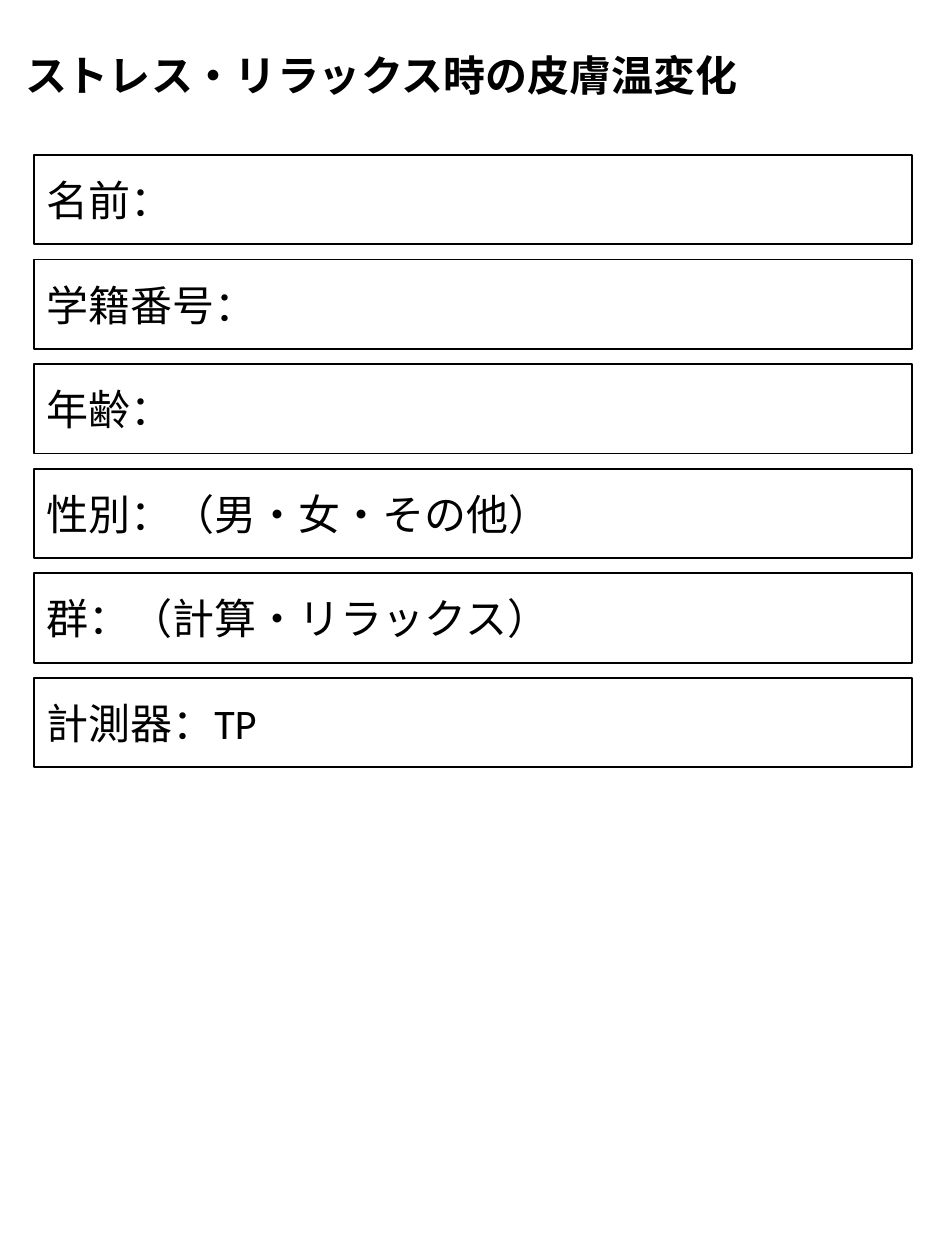
from typing import NamedTuple

from pptx import Presentation
from pptx.dml.color import RGBColor
from pptx.enum import shapes, text
from pptx.util import Inches, Pt

BLACK, WHITE = "000000", "FFFFFF"
FONT = "Calibri"
FIELD_LEFT, FIELD_TOP = 0.27, 1.23
FIELD_WIDTH, FIELD_HEIGHT = 6.97, 0.71
FIELD_PITCH = 0.83


class Field(NamedTuple):
    label: str
    answer: str = ""


FIELDS = [
    Field("名前："),
    Field("学籍番号："),
    Field("年齢："),
    Field("性別：", "（男・女・その他）"),
    Field("群：", "（計算・リラックス）"),
    Field("計測器：", "TP"),
]


def rgb(value: str) -> RGBColor:
    return RGBColor.from_string(value)


def write(tf, content: str, bold: bool = False) -> None:
    p = tf.paragraphs[0]
    p.alignment = text.PP_ALIGN.LEFT
    r = p.add_run()
    r.text = content
    r.font.name = FONT
    r.font.size = Pt(24)
    r.font.bold = bold
    r.font.color.rgb = rgb(BLACK)


def add_title(s, content: str) -> None:
    tf = s.shapes.add_textbox(
        Inches(0.1), Inches(0.34), Inches(5.92), Inches(0.5)
    ).text_frame
    tf.word_wrap = False
    tf.auto_size = text.MSO_AUTO_SIZE.SHAPE_TO_FIT_TEXT
    write(tf, content, bold=True)


def add_field(s, field: Field, row: int) -> None:
    sp = s.shapes.add_shape(
        shapes.MSO_SHAPE.RECTANGLE,
        Inches(FIELD_LEFT),
        Inches(FIELD_TOP + row * FIELD_PITCH),
        Inches(FIELD_WIDTH),
        Inches(FIELD_HEIGHT),
    )
    sp.shadow.inherit = False
    sp.fill.solid()
    sp.fill.fore_color.rgb = rgb(WHITE)
    sp.line.color.rgb = rgb(BLACK)
    sp.line.width = Pt(1)
    tf = sp.text_frame
    tf.word_wrap = True
    tf.vertical_anchor = text.MSO_ANCHOR.MIDDLE
    write(tf, field.label + field.answer)


def main() -> None:
    prs = Presentation()
    prs.slide_width, prs.slide_height = Inches(7.5), Inches(10)
    s = prs.slides.add_slide(prs.slide_layouts[6])
    add_title(s, "ストレス・リラックス時の皮膚温変化")
    for row, field in enumerate(FIELDS):
        add_field(s, field, row)
    prs.save("out.pptx")


if __name__ == "__main__":
    main()
